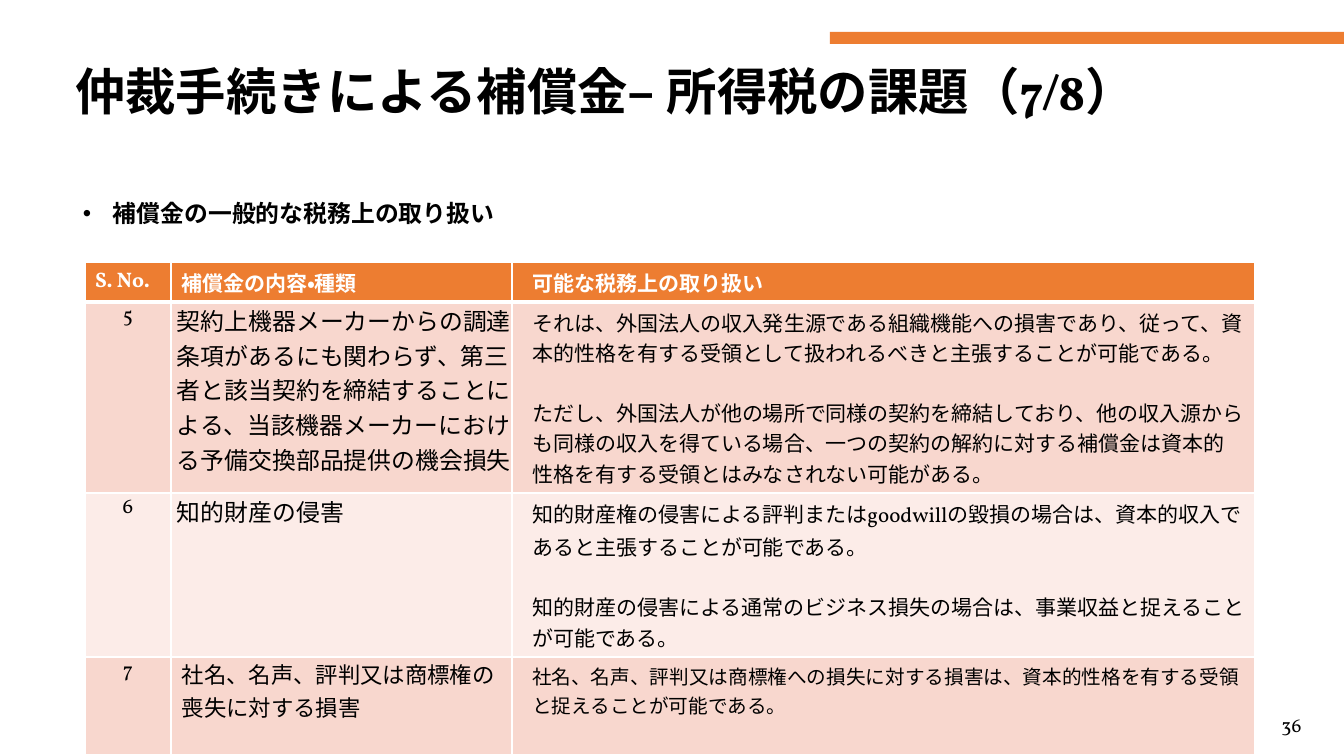
import pptx
import pptx.util
import pptx.dml.color
import pptx.enum.lang
import pptx.enum.shapes
import pptx.enum.text
import pptx.oxml
import pptx.oxml.ns
import lxml.etree

TITLE = "仲裁手続きによる補償金– 所得税の課題（7/8）"
SUBTITLE = "補償金の一般的な税務上の取り扱い"
PAGE_NUMBER = "36"
HEADER = ["S. No.", "補償金の内容・種類", "可能な税務上の取り扱い"]
ROWS = [
    ("5",
     "契約上機器メーカーからの調達条項があるにも関わらず、第三者と該当契約を締結することによる、当該機器メーカーにおける予備交換部品提供の機会損失",
     ["それは、外国法人の収入発生源である組織機能への損害であり、従って、資本的性格を有する受領として扱われるべきと主張することが可能である。",
      "ただし、外国法人が他の場所で同様の契約を締結しており、他の収入源からも同様の収入を得ている場合、一つの契約の解約に対する補償金は資本的性格を有する受領とはみなされない可能がある。"]),
    ("6",
     "知的財産の侵害",
     ["知的財産権の侵害による評判またはgoodwillの毀損の場合は、資本的収入であると主張することが可能である。",
      "知的財産の侵害による通常のビジネス損失の場合は、事業収益と捉えることが可能である。"]),
    ("7",
     "社名、名声、評判又は商標権の喪失に対する損害",
     ["社名、名声、評判又は商標権への損失に対する損害は、資本的性格を有する受領と捉えることが可能である。"]),
]
KIND_STYLES = [(17, 5), (17, 5), (16, 10)]
TREATMENT_SIZES = [15, 15, 14]
COLUMN_WIDTHS = [86, 341, 743]
ROW_HEIGHTS = [40, 191, 164, 98]
COLORS = {"text": "000000", "white": "FFFFFF", "orange": "ED7D31",
          "band": "F8D7CE", "light": "FCECE8"}
FONT = "Vollkorn"
SCALE = 914400 / 100.8
ALIGN = pptx.enum.text.PP_ALIGN


def px(length):
    return pptx.util.Emu(round(length * SCALE))


def rgb(name):
    return pptx.dml.color.RGBColor.from_string(COLORS[name])


def place(shape, left, top, width, height):
    shape.left, shape.top = px(left), px(top)
    shape.width, shape.height = px(width), px(height)


def write(frame, lines, size, color="text", bold=False, align=ALIGN.LEFT,
          indent=0, gap=0):
    frame.word_wrap = True
    for index, line in enumerate(lines):
        para = frame.add_paragraph() if index else frame.paragraphs[0]
        para.text = line
        para.alignment = align
        para.space_before = pptx.util.Pt(gap if index else 0)
        if indent:
            para._p.get_or_add_pPr().set("marL", str(px(indent)))
        for span in para.runs:
            span.font.name = FONT
            span.font.size = pptx.util.Pt(size)
            span.font.bold = bold
            span.font.color.rgb = rgb(color)
            span.font.language_id = pptx.enum.lang.MSO_LANGUAGE_ID.JAPANESE


def add_bullet(para, indent):
    properties = para._p.get_or_add_pPr()
    properties.set("marL", str(px(indent)))
    properties.set("indent", str(px(-indent)))
    for tag, key, value in [("a:buFont", "typeface", "Arial"), ("a:buChar", "char", "•")]:
        bullet = lxml.etree.SubElement(properties, pptx.oxml.ns.qn(tag))
        bullet.set(key, value)


def style_cell(cell, fill, bottom_width=1):
    properties = cell._tc.get_or_add_tcPr()
    for side, width in [("L", 1), ("R", 1), ("T", 1), ("B", bottom_width)]:
        line = lxml.etree.SubElement(properties, pptx.oxml.ns.qn("a:ln" + side))
        line.set("w", str(pptx.util.Pt(width)))
        solid = lxml.etree.SubElement(line, pptx.oxml.ns.qn("a:solidFill"))
        color = lxml.etree.SubElement(solid, pptx.oxml.ns.qn("a:srgbClr"))
        color.set("val", COLORS["white"])
    cell.fill.solid()
    cell.fill.fore_color.rgb = rgb(fill)


def set_tight_margins(cell):
    cell.margin_left = cell.margin_top = cell.margin_right = px(1)
    cell.margin_bottom = 0


def add_treatment_table(page):
    holder = page.shapes.add_table(len(ROWS) + 1, len(HEADER), px(85), px(262),
                                   px(sum(COLUMN_WIDTHS)), px(sum(ROW_HEIGHTS)))
    table = holder.table
    table.horz_banding = False
    for column, width in zip(table.columns, COLUMN_WIDTHS):
        column.width = px(width)
    for row, height in zip(table.rows, ROW_HEIGHTS):
        row.height = px(height)
    for index, label in enumerate(HEADER):
        cell = table.cell(0, index)
        write(cell.text_frame, [label], 15, "white", True, indent=10 if index == 2 else 0)
        style_cell(cell, "orange", 3)
    for index, (number, kind, treatments) in enumerate(ROWS):
        number_cell, kind_cell, treatment_cell = table.rows[index + 1].cells
        kind_size, kind_indent = KIND_STYLES[index]
        write(number_cell.text_frame, [number], 15, align=ALIGN.CENTER)
        write(kind_cell.text_frame, [kind], kind_size, indent=kind_indent)
        write(treatment_cell.text_frame, treatments, TREATMENT_SIZES[index], indent=10, gap=21)
        set_tight_margins(number_cell)
        set_tight_margins(kind_cell)
        for cell in (number_cell, kind_cell, treatment_cell):
            style_cell(cell, "light" if index % 2 else "band")


def main():
    deck = pptx.Presentation()
    deck.slide_width, deck.slide_height = px(1344), px(756)
    page = deck.slides.add_slide(deck.slide_layouts[5])

    title = page.shapes.title
    place(title, 65, 38, 1159, 112)
    write(title.text_frame, [TITLE], 36, bold=True)
    title.text_frame.auto_size = pptx.enum.text.MSO_AUTO_SIZE.NONE
    title.text_frame.vertical_anchor = pptx.enum.text.MSO_ANCHOR.MIDDLE
    title.text_frame.paragraphs[0].line_spacing = 0.9

    subtitle = page.shapes.add_textbox(px(73), px(194), px(1205), px(50))
    write(subtitle.text_frame, [SUBTITLE], 17, bold=True)
    add_bullet(subtitle.text_frame.paragraphs[0], 30)

    accent = page.shapes.add_shape(pptx.enum.shapes.MSO_SHAPE.RECTANGLE,
                                   px(830), px(32), px(514), px(12))
    accent.shadow.inherit = False
    accent.fill.solid()
    accent.fill.fore_color.rgb = rgb("orange")
    accent.line.fill.background()

    number = page.shapes.add_textbox(px(1277), px(713), px(29), px(34))
    frame = number.text_frame
    frame.margin_left = frame.margin_top = frame.margin_right = frame.margin_bottom = 0
    write(frame, [PAGE_NUMBER], 14, align=ALIGN.CENTER)
    frame.paragraphs[0].space_before = pptx.util.Pt(4.5)

    add_treatment_table(page)
    deck.save("out.pptx")


if __name__ == "__main__":
    main()
